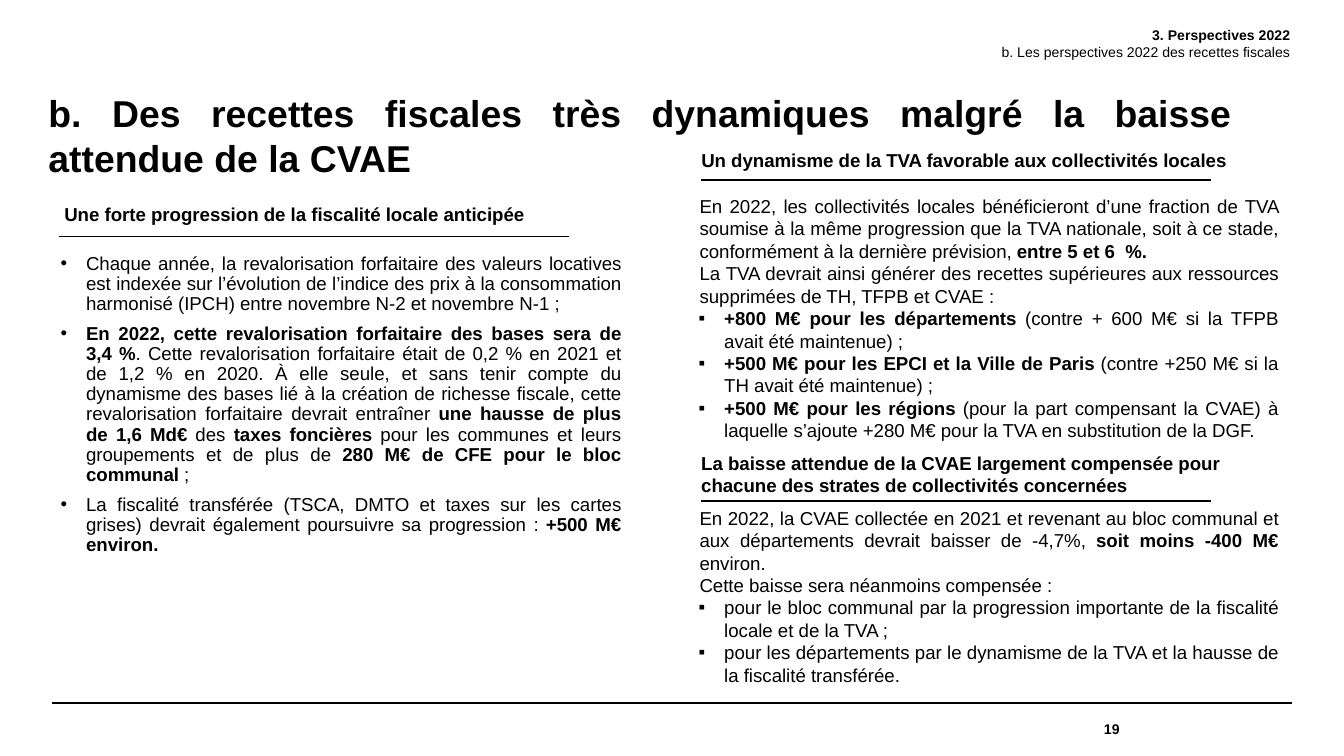
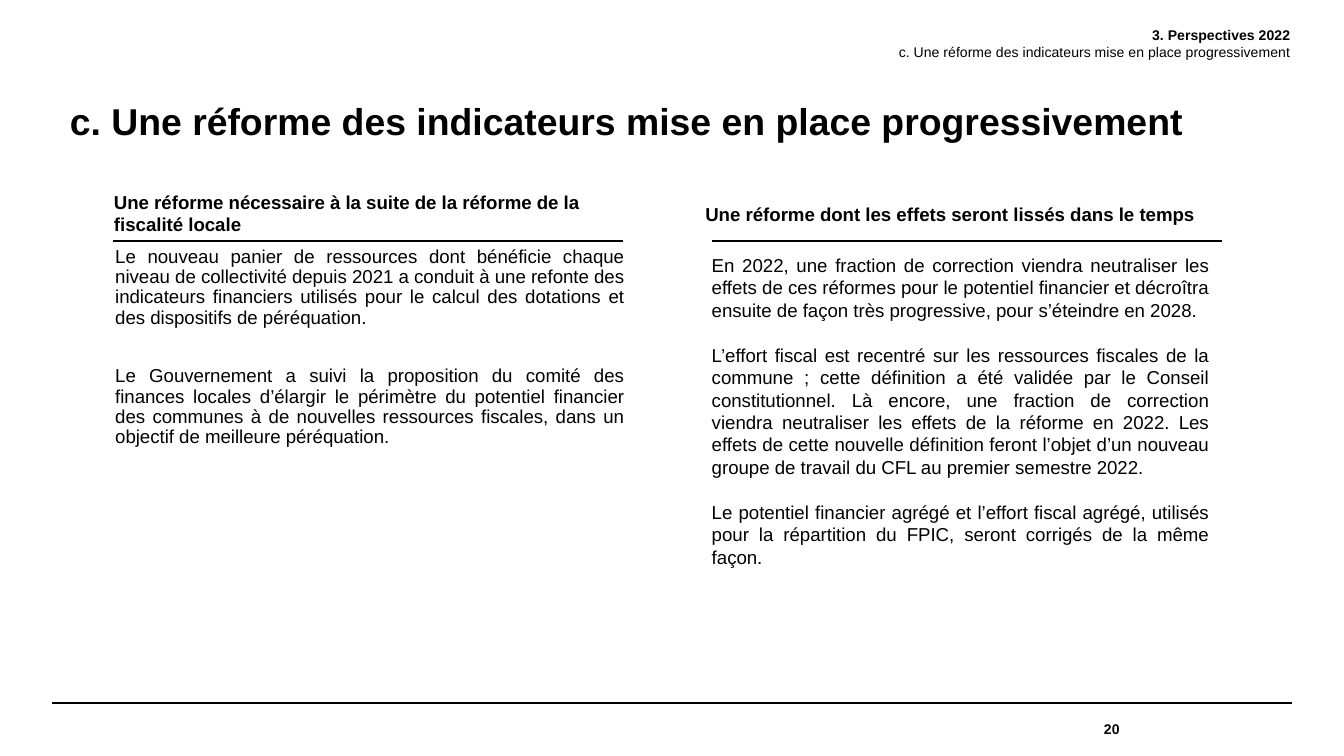
from lxml import etree
from pptx import Presentation
from pptx.dml.color import RGBColor
from pptx.enum.shapes import MSO_CONNECTOR
from pptx.enum.text import MSO_ANCHOR, MSO_AUTO_SIZE, PP_ALIGN
from pptx.oxml.ns import qn
from pptx.util import Pt

STRAIGHT = MSO_CONNECTOR.STRAIGHT
TOP, MIDDLE = MSO_ANCHOR.TOP, MSO_ANCHOR.MIDDLE
NO_FIT = MSO_AUTO_SIZE.NONE
LEFT, RIGHT, JUSTIFY = PP_ALIGN.LEFT, PP_ALIGN.RIGHT, PP_ALIGN.JUSTIFY

THEME = {
    "font": "Arial",
    "ink": RGBColor(0, 0, 0),
    "title": 20,
    "body": 10,
    "small": 7.5,
    "rule": 1,
    "footer_rule": 0.79,
}
RULE_WIDTH = 273
INSETS = (7.2, 3.6)
NO_INSETS = (0, 0)
INDENTS = {"": (0, 0), "text": (14.2, 0), "•": (27.4, -13.7), "▪": (27.4, -13.7)}


def write_text(sp, paragraphs, size, align=LEFT, insets=INSETS, anchor=TOP,
               before=0, after=0, spacing=None):
    tf = sp.text_frame
    tf.word_wrap = True
    tf.auto_size = NO_FIT
    tf.vertical_anchor = anchor
    tf.margin_left = tf.margin_right = Pt(insets[0])
    tf.margin_top = tf.margin_bottom = Pt(insets[1])
    for i, (style, text) in enumerate(paragraphs):
        p = tf.paragraphs[0] if i == 0 else tf.add_paragraph()
        margin, indent = INDENTS[style]
        pPr = p._p.get_or_add_pPr()
        pPr.set("marL", str(Pt(margin)))
        pPr.set("indent", str(Pt(indent)))
        if indent:
            etree.SubElement(pPr, qn("a:buFont")).set("typeface", THEME["font"])
            etree.SubElement(pPr, qn("a:buChar")).set("char", style)
        p.alignment = align
        p.space_before = Pt(before if i else 0)
        p.space_after = Pt(after)
        if spacing:
            p.line_spacing = spacing
        for n, part in enumerate(text.split("**")):
            if part:
                r = p.add_run()
                r.text = part
                r.font.name = THEME["font"]
                r.font.size = Pt(size)
                r.font.bold = n % 2 == 1
                r.font.color.rgb = THEME["ink"]


def add_rule(s, x, y, width, weight):
    rule = s.shapes.add_connector(STRAIGHT, Pt(x), Pt(y), Pt(x + width), Pt(y))
    rule.line.color.rgb = THEME["ink"]
    rule.line.width = Pt(weight)
    etree.SubElement(rule._element.spPr, qn("a:effectLst"))


TIGHT = {"insets": NO_INSETS, "spacing": 0.9}

SLIDES = [
    {
        "number": 19,
        "section": "b. Les perspectives 2022 des recettes fiscales",
        "title": "b. Des recettes fiscales très dynamiques malgré la baisse attendue de la CVAE",
        "title_box": (18.7, 44.6, 648.7, 55.4),
        "headings": [
            ((27.4, 105.1, 308, 19.4), (31.7, 126.7),
             "Une forte progression de la fiscalité locale anticipée"),
            ((368.6, 76.3, 323.3, 19.4), (375.8, 96.5),
             "Un dynamisme de la TVA favorable aux collectivités locales"),
            ((368.6, 238.3, 308, 31.7), (375.8, 268.6),
             "La baisse attendue de la CVAE largement compensée pour chacune des "
             "strates de collectivités concernées"),
        ],
        "bodies": [
            ((18.7, 136.1, 314, 225.4), {**TIGHT, "before": 5}, [
                ("•", "Chaque année, la revalorisation forfaitaire des valeurs locatives est "
                      "indexée sur l’évolution de l’indice des prix à la consommation harmonisé "
                      "(IPCH) entre novembre N-2 et novembre N-1 ;"),
                ("•", "**En 2022, cette revalorisation forfaitaire des bases sera de 3,4 %**. "
                      "Cette revalorisation forfaitaire était de 0,2 % en 2021 et de 1,2 % en "
                      "2020. À elle seule, et sans tenir compte du dynamisme des bases lié à la "
                      "création de richesse fiscale, cette revalorisation forfaitaire devrait "
                      "entraîner **une hausse de plus de 1,6 Md€** des **taxes foncières** pour "
                      "les communes et leurs groupements et de plus de **280 M€ de CFE pour le "
                      "bloc communal **;"),
                ("•", "La fiscalité transférée (TSCA, DMTO et taxes sur les cartes grises) "
                      "devrait également poursuivre sa progression : **+500 M€ environ.**"),
            ]),
            ((353.5, 100.8, 338.4, 140.4), {}, [
                ("text", "En 2022, les collectivités locales bénéficieront d’une fraction de TVA "
                         "soumise à la même progression que la TVA nationale, soit à ce stade, "
                         "conformément à la dernière prévision, **entre 5 et 6  %.**"),
                ("text", "La TVA devrait ainsi générer des recettes supérieures aux ressources "
                         "supprimées de TH, TFPB et CVAE :"),
                ("▪", "**+800 M€ pour les départements **(contre + 600 M€ si la TFPB avait été "
                      "maintenue) ;"),
                ("▪", "**+500 M€ pour les EPCI et la Ville de Paris **(contre +250 M€ si la TH "
                      "avait été maintenue) ;"),
                ("▪", "**+500 M€ pour les régions **(pour la part compensant la CVAE) à laquelle "
                      "s’ajoute +280 M€ pour la TVA en substitution de la DGF."),
            ]),
            ((353.5, 267.8, 338.4, 104.4), {}, [
                ("text", "En 2022, la CVAE collectée en 2021 et revenant au bloc communal et aux "
                         "départements devrait baisser de -4,7%, **soit moins -400 M€ **environ."),
                ("text", "Cette baisse sera néanmoins compensée :"),
                ("▪", "pour le bloc communal par la progression importante de la fiscalité "
                      "locale et de la TVA ;"),
                ("▪", "pour les départements par le dynamisme de la TVA et la hausse de la "
                      "fiscalité transférée."),
            ]),
        ],
    },
    {
        "number": 20,
        "section": "c. Une réforme des indicateurs mise en place progressivement",
        "title": "c. Une réforme des indicateurs mise en place progressivement",
        "title_box": (30.2, 49, 648.7, 31.7),
        "headings": [
            ((54, 98.6, 280, 31.7), (60.5, 128.9),
             "Une réforme nécessaire à la suite de la réforme de la fiscalité locale"),
            ((370.8, 105.1, 308, 19.4), (381.6, 128.9),
             "Une réforme dont les effets seront lissés dans le temps"),
        ],
        "bodies": [
            ((47.5, 132.5, 286.6, 225.4), {**TIGHT, "before": 20.7}, [
                ("text", "Le nouveau panier de ressources dont bénéficie chaque niveau de "
                         "collectivité depuis 2021 a conduit à une refonte des indicateurs "
                         "financiers utilisés pour le calcul des dotations et des dispositifs de "
                         "péréquation."),
                ("text", "Le Gouvernement a suivi la proposition du comité des finances locales "
                         "d’élargir le périmètre du potentiel financier des communes à de "
                         "nouvelles ressources fiscales, dans un objectif de meilleure "
                         "péréquation."),
            ]),
            ((360, 132.5, 294.5, 177.1), {"before": 12}, [
                ("text", "En 2022, une fraction de correction viendra neutraliser les effets de "
                         "ces réformes pour le potentiel financier et décroîtra ensuite de façon "
                         "très progressive, pour s’éteindre en 2028."),
                ("text", "L’effort fiscal est recentré sur les ressources fiscales de la commune "
                         "; cette définition a été validée par le Conseil constitutionnel. Là "
                         "encore, une fraction de correction viendra neutraliser les effets de la "
                         "réforme en 2022. Les effets de cette nouvelle définition feront l’objet "
                         "d’un nouveau groupe de travail du CFL au premier semestre 2022."),
                ("text", "Le potentiel financier agrégé et l’effort fiscal agrégé, utilisés pour "
                         "la répartition du FPIC, seront corrigés de la même façon."),
            ]),
        ],
    },
]

prs = Presentation()
prs.slide_width, prs.slide_height = Pt(720), Pt(405)

for content in SLIDES:
    s = prs.slides.add_slide(prs.slide_layouts[5])
    add_rule(s, 28.1, 376.6, 663.8, THEME["footer_rule"])

    title = s.shapes.title
    title.left, title.top, title.width, title.height = map(Pt, content["title_box"])
    write_text(title, [("", f"**{content['title']}**")], THEME["title"], JUSTIFY)

    header = s.shapes.add_textbox(Pt(260.6), Pt(14.4), Pt(430.6), Pt(28))
    write_text(header, [("", "**3. Perspectives 2022**"), ("", content["section"])],
               THEME["small"], RIGHT, NO_INSETS)

    for box, (rule_x, rule_y), text in content["headings"]:
        heading = s.shapes.add_textbox(*map(Pt, box))
        write_text(heading, [("", f"**{text}**")], THEME["body"], after=2)
        add_rule(s, rule_x, rule_y, RULE_WIDTH, THEME["rule"])

    for box, options, paragraphs in content["bodies"]:
        body = s.shapes.add_textbox(*map(Pt, box))
        write_text(body, paragraphs, THEME["body"], JUSTIFY, **options)

    number = s.shapes.add_textbox(Pt(493.2), Pt(376.6), Pt(106.6), Pt(28))
    write_text(number, [("", f"**{content['number']}**")], THEME["small"], RIGHT,
               NO_INSETS, MIDDLE)

prs.save("out.pptx")
